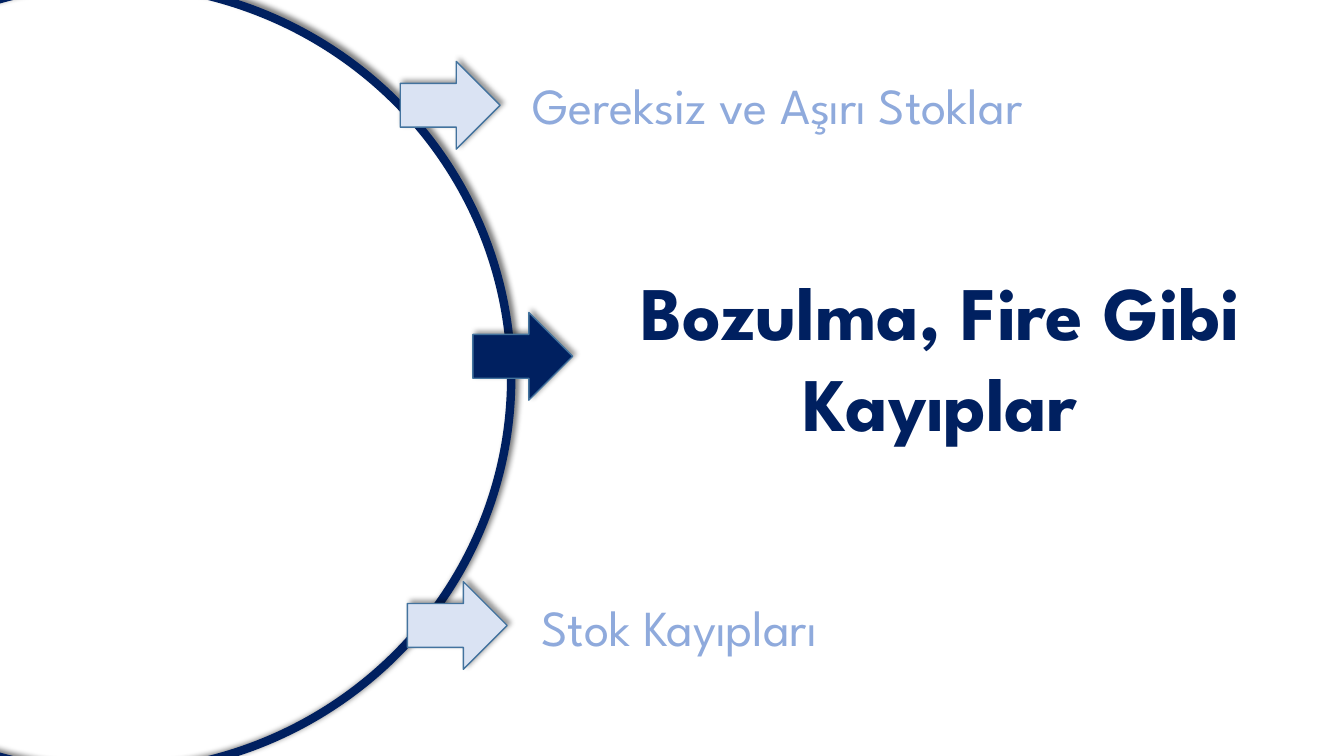
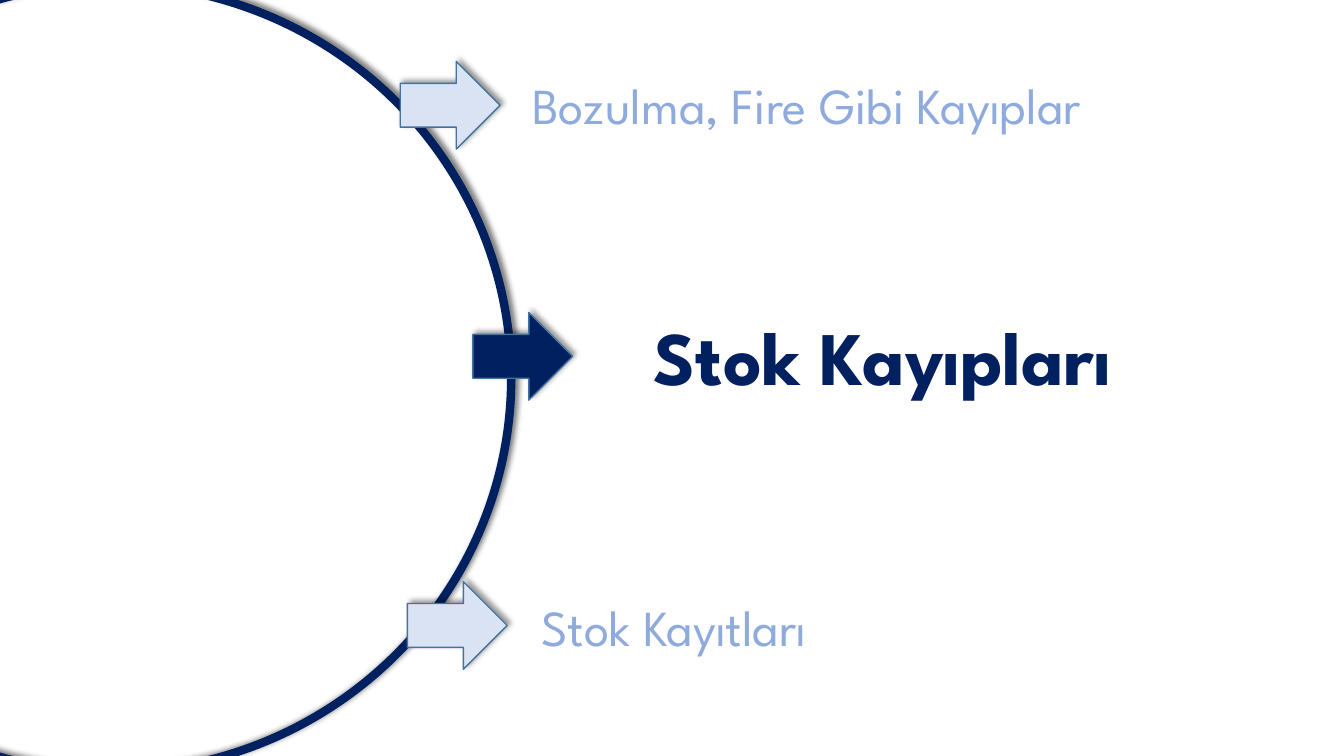
from dataclasses import dataclass

from lxml.etree import SubElement
from pptx import Presentation
from pptx.dml.color import RGBColor
from pptx.enum.shapes import MSO_SHAPE as Preset
from pptx.enum.text import MSO_AUTO_SIZE as AutoSize, PP_ALIGN as Align
from pptx.oxml.ns import qn
from pptx.util import Emu, Pt


@dataclass(frozen=True)
class Theme:
    font: str = "League Spartan"
    navy: str = "002060"
    pale: str = "DAE3F3"
    muted: str = "8FAADC"
    outline: str = "43739E"
    shadow: str = "000000"
    headline_size: int = 54
    topic_size: int = 36


THEME = Theme()
EMU_PER_PX = 9144
SLIDE_SIZE = (1333, 750)
RING_BOX = (-288, -16, 795, 782)
ARROW_SIZE = (99, 87)
CURRENT_ARROW = (469, 310)
PREVIOUS_ARROW = (397, 61)
NEXT_ARROW = (404, 577)
PREVIOUS_BOX = (518, 69, 696, 71)
NEXT_BOX = (527, 586, 672, 71)

TOPICS = [
    ("Gereksiz ve Aşırı Stoklar", "Bozulma, Fire Gibi Kayıplar",
     "Stok Kayıpları", (585, 258, 696, 192)),
    ("Bozulma, Fire Gibi Kayıplar", "Stok Kayıpları",
     "Stok Kayıtları", (527, 303, 696, 101)),
]


def px(*lengths):
    return [Emu(length * EMU_PER_PX) for length in lengths]


def rgb(code):
    return RGBColor.from_string(code)


def cast_shadow(shape, opacity):
    shape.shadow.inherit = False
    effects = shape._element.spPr.find(qn("a:effectLst"))
    shadow = SubElement(effects, qn("a:outerShdw"), blurRad=str(Pt(4)),
                        dist=str(Pt(3)), dir=str(315 * 60000),
                        algn="bl", rotWithShape="0")
    color = SubElement(shadow, qn("a:srgbClr"), val=THEME.shadow)
    SubElement(color, qn("a:alpha"), val=str(opacity * 1000))


def add_ring(slide):
    ring = slide.shapes.add_shape(Preset.OVAL, *px(*RING_BOX))
    ring.fill.background()
    ring.line.color.rgb = rgb(THEME.navy)
    ring.line.width = Pt(6)
    cast_shadow(ring, 52)


def add_arrow(slide, position, color):
    arrow = slide.shapes.add_shape(
        Preset.RIGHT_ARROW, *px(*position, *ARROW_SIZE))
    arrow.fill.solid()
    arrow.fill.fore_color.rgb = rgb(color)
    arrow.line.color.rgb = rgb(THEME.outline)
    arrow.line.width = Pt(1)
    cast_shadow(arrow, 40)


def add_label(slide, wording, box, size, color, bold=False, align=Align.LEFT):
    frame = slide.shapes.add_textbox(*px(*box)).text_frame
    frame.word_wrap = True
    frame.auto_size = AutoSize.SHAPE_TO_FIT_TEXT
    paragraph = frame.paragraphs[0]
    paragraph.text = wording
    paragraph.alignment = align
    paragraph.font.name = THEME.font
    paragraph.font.size = Pt(size)
    paragraph.font.bold = bold
    paragraph.font.color.rgb = rgb(color)


def add_topic_slide(deck, previous, current, following, headline_box):
    slide = deck.slides.add_slide(deck.slide_layouts[6])
    add_ring(slide)
    add_arrow(slide, CURRENT_ARROW, THEME.navy)
    add_arrow(slide, PREVIOUS_ARROW, THEME.pale)
    add_arrow(slide, NEXT_ARROW, THEME.pale)
    add_label(slide, current, headline_box, THEME.headline_size, THEME.navy,
              bold=True, align=Align.CENTER)
    add_label(slide, following, NEXT_BOX, THEME.topic_size, THEME.muted)
    add_label(slide, previous, PREVIOUS_BOX, THEME.topic_size, THEME.muted)


def main():
    deck = Presentation()
    deck.slide_width, deck.slide_height = px(*SLIDE_SIZE)
    for topic in TOPICS:
        add_topic_slide(deck, *topic)
    deck.save("out.pptx")


if __name__ == "__main__":
    main()
